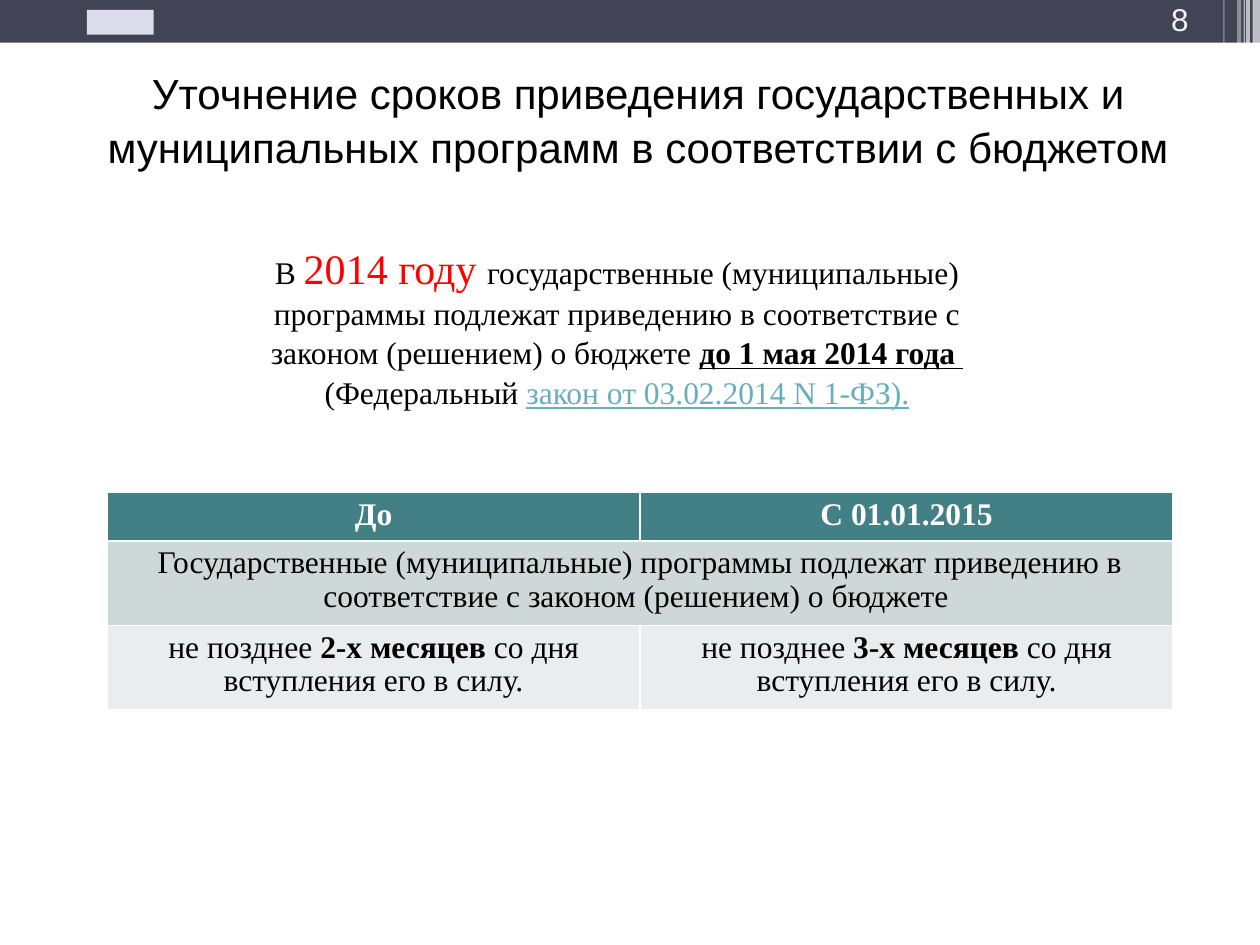
"""Build a slide on the deadlines for aligning state programmes with the budget."""
import lxml.etree
import pptx
import pptx.dml.color
import pptx.enum.shapes
import pptx.enum.text
import pptx.oxml.ns
import pptx.util
from pptx.util import Cm

THEME = {
    "band": "424456", "white": "FFFFFF", "mark": "DBDBE9", "number": "F2F2F2",
    "text": "000000", "accent": "FF0000", "link": "67AFBD",
    "header": "438086", "row_dark": "CFD8D9", "row_light": "E9EDED",
    "heading_font": "Arial", "body_font": "Times New Roman",
    "large": 24, "normal": 18,
}
CENTER = pptx.enum.text.PP_ALIGN.CENTER


def style(font, color="text", size="normal", face="body_font", bold=None):
    font.name = THEME[face]
    font.size = pptx.util.Pt(THEME[size])
    font.color.rgb = pptx.dml.color.RGBColor.from_string(THEME[color])
    font.bold = bold


def add_block(shapes, left, top, width, height, color, opacity=100):
    block = shapes.add_shape(pptx.enum.shapes.MSO_SHAPE.RECTANGLE,
                             Cm(left), Cm(top), Cm(width), Cm(height))
    block.shadow.inherit = False
    block.fill.solid()
    block.fill.fore_color.rgb = pptx.dml.color.RGBColor.from_string(THEME[color])
    block.line.fill.background()
    if opacity < 100:
        shade = block.fill._xPr.find(".//" + pptx.oxml.ns.qn("a:srgbClr"))
        lxml.etree.SubElement(shade, pptx.oxml.ns.qn("a:alpha"), val=str(opacity * 1000))


deck = pptx.Presentation()
deck.slide_width, deck.slide_height = Cm(25.4), Cm(19.05)
slide = deck.slides.add_slide(deck.slide_layouts[5])

add_block(slide.shapes, 0, 0, 25.4, 0.86, "band")
for left, width, height, opacity in [(25.25, 0.15, 1.73, 65), (25.12, 0.08, 1.73, 65),
                                     (25.07, 0.03, 1.73, 60), (24.94, 0.08, 1.73, 40),
                                     (24.66, 0.03, 1.63, 30)]:
    add_block(slide.shapes, left, 0, width, height, "white", opacity)
add_block(slide.shapes, 1.75, 0.2, 1.35, 0.5, "mark")

page_number = slide.shapes.add_textbox(Cm(22.2), Cm(0.05), Cm(2.01), Cm(0.84)).text_frame
page_number.word_wrap = True
page_number.vertical_anchor = pptx.enum.text.MSO_ANCHOR.BOTTOM
page_number.text = "8"
page_number.paragraphs[0].alignment = pptx.enum.text.PP_ALIGN.RIGHT
style(page_number.paragraphs[0].font, "number", face="heading_font")

title = slide.shapes.title
title.left, title.top, title.width, title.height = Cm(0.71), Cm(1.47), Cm(24.31), Cm(1.8)
title.text_frame.text = ("Уточнение сроков приведения государственных и "
                         "муниципальных программ в соответствии с бюджетом")
title.text_frame.auto_size = pptx.enum.text.MSO_AUTO_SIZE.NONE
title.text_frame.vertical_anchor = pptx.enum.text.MSO_ANCHOR.MIDDLE
heading = title.text_frame.paragraphs[0]
heading.alignment = CENTER
heading.line_spacing = 1.07
style(heading.font, size="large", face="heading_font")

rule = slide.shapes.add_textbox(Cm(5), Cm(4.72), Cm(14.88), Cm(3.58)).text_frame
rule.word_wrap = True
rule_2014 = [
    [("В ", "text", "normal", False, False),
     ("2014 году ", "accent", "large", False, False),
     ("государственные (муниципальные) программы подлежат приведению в соответствие "
      "с законом (решением) о бюджете ", "text", "normal", False, False),
     ("до 1 мая 2014 года ", "text", "normal", True, True)],
    [("(Федеральный ", "text", "normal", False, False),
     ("закон от 03.02.2014 N 1-ФЗ).", "link", "normal", False, True)],
]
for index, phrases in enumerate(rule_2014):
    sentence = rule.add_paragraph() if index else rule.paragraphs[0]
    sentence.alignment = CENTER
    sentence.line_spacing = 1.04
    for text, color, size, bold, underline in phrases:
        phrase = sentence.add_run()
        phrase.text = text
        style(phrase.font, color, size, bold=bold)
        phrase.font.underline = underline

deadlines = slide.shapes.add_table(3, 2, Cm(2.16), Cm(9.93), Cm(21.49), Cm(4.26)).table
for row, height in zip(deadlines.rows, [0.94, 1.64, 1.68]):
    row.height = Cm(height)
deadlines.cell(1, 0).merge(deadlines.cell(1, 1))

ending = "со дня вступления его в силу."
rows = [
    ("header", "white", [[("До", True)], [("С 01.01.2015", True)]]),
    ("row_dark", "text", [[("Государственные (муниципальные) программы подлежат приведению "
                            "в соответствие с законом (решением) о бюджете ", False)]]),
    ("row_light", "text", [[("не позднее ", False), (f"{months}-х месяцев ", True),
                            (ending, False)] for months in (2, 3)]),
]
for row_index, (fill, color, entries) in enumerate(rows):
    for column, phrases in enumerate(entries):
        cell = deadlines.cell(row_index, column)
        cell.fill.solid()
        cell.fill.fore_color.rgb = pptx.dml.color.RGBColor.from_string(THEME[fill])
        entry = cell.text_frame.paragraphs[0]
        entry.alignment = CENTER
        entry.line_spacing = 0.95
        for text, bold in phrases:
            phrase = entry.add_run()
            phrase.text = text
            style(phrase.font, color, bold=bold)

deck.save("out.pptx")
